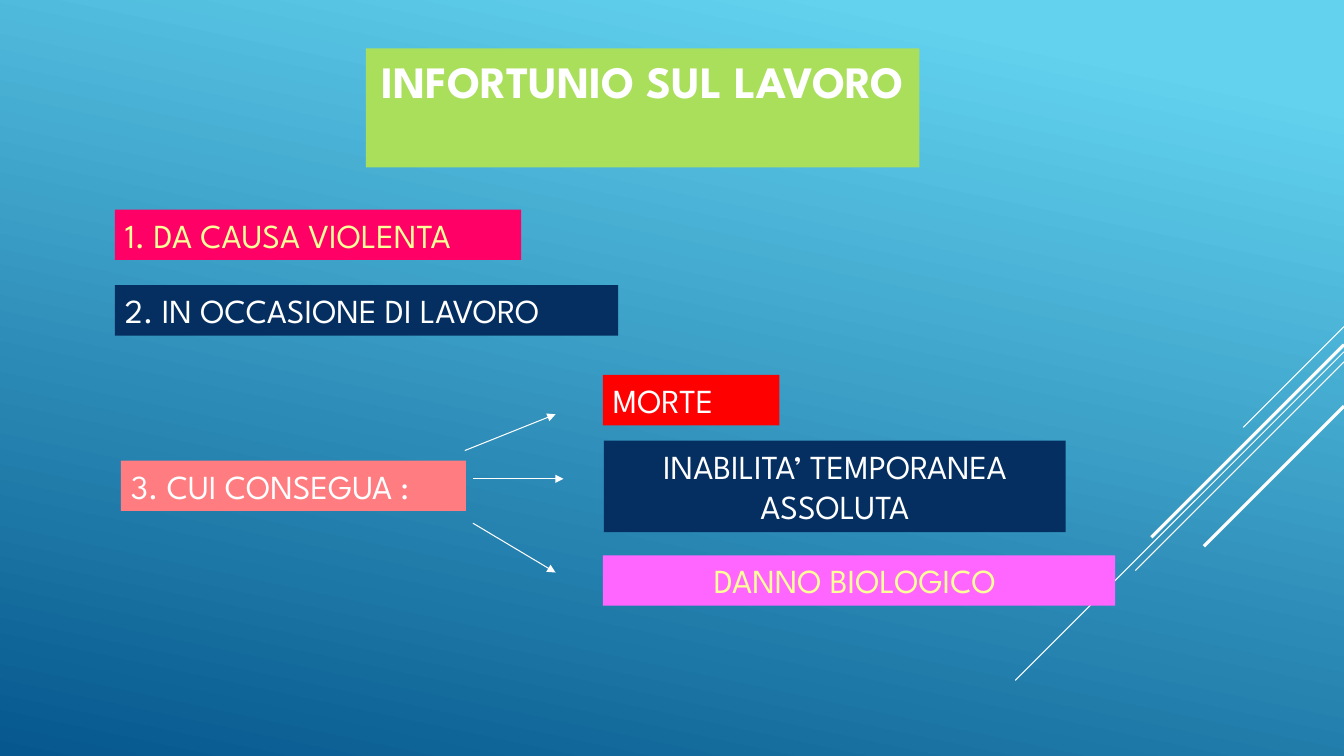
from copy import deepcopy
from dataclasses import dataclass

from pptx import Presentation
from pptx.dml.color import RGBColor
from pptx.enum.shapes import MSO_CONNECTOR, MSO_SHAPE
from pptx.enum.text import MSO_ANCHOR, MSO_AUTO_SIZE, PP_ALIGN
from pptx.oxml.ns import qn
from pptx.oxml.xmlchemy import OxmlElement
from pptx.util import Emu, Pt

RECTANGLE = MSO_SHAPE.RECTANGLE
STRAIGHT = MSO_CONNECTOR.STRAIGHT
TOP = MSO_ANCHOR.TOP
NO_AUTOFIT = MSO_AUTO_SIZE.NONE
LEFT, CENTER = PP_ALIGN.LEFT, PP_ALIGN.CENTER

EMU_PER_PX = 9144  # 100 px to the inch
FONT = "League Spartan"
WHITE, YELLOW, NAVY = "FFFFFF", "FFFF99", "052F61"
LINE_HEIGHT = 50


@dataclass
class Label:
    text: str
    left: int
    top: int
    width: int
    fill: str
    height: int = LINE_HEIGHT
    color: str = WHITE
    align: PP_ALIGN = LEFT


@dataclass
class Line:
    start: tuple[int, int]
    end: tuple[int, int]
    weight: float = 0.75
    arrow: bool = False


TITLE = Label("INFORTUNIO SUL LAVORO", 363, 48, 549, "AADF5C", 118, align=CENTER)

LABELS = [
    Label("1. DA CAUSA VIOLENTA", 114, 208, 403, "FF0066", color=YELLOW),
    Label("2. IN OCCASIONE DI LAVORO", 114, 283, 499, NAVY),
    Label("3. CUI CONSEGUA :", 120, 457, 342, "FF7C80"),
    Label("MORTE", 598, 372, 175, "FF0000"),
    Label("DANNO BIOLOGICO ", 598, 551, 508, "FF66FF", color=YELLOW, align=CENTER),
    Label("INABILITA’ TEMPORANEA ASSOLUTA", 599, 437, 458, NAVY, 91, align=CENTER),
]

ARROWS = [
    Line((461, 447), (551, 411), arrow=True),
    Line((469, 475), (559, 475), arrow=True),
    Line((469, 519), (551, 568), arrow=True),
]

# Diagonals run down from the right edge: start height, run, weight
EDGE = 1333
DIAGONALS = [
    Line((EDGE, y), (EDGE - run, y + run), weight)
    for y, run, weight in [
        (324, 100, 0.75), (349, 326, 0.75), (359, 207, 0.75),
        (342, 191, 2.25), (403, 139, 2.25),
    ]
]


def px(length: int) -> Emu:
    return Emu(length * EMU_PER_PX)


def rgb(color: str) -> RGBColor:
    return RGBColor.from_string(color)


def write(box, text: str, *, size: int, color: str, align: PP_ALIGN, bold: bool = False) -> None:
    frame = box.text_frame
    frame.word_wrap = True
    frame.auto_size = NO_AUTOFIT
    frame.vertical_anchor = TOP
    frame.margin_left = frame.margin_right = px(10)
    frame.margin_top = frame.margin_bottom = px(5)
    para = frame.paragraphs[0]
    para.alignment = align
    span = para.add_run()
    span.text = text
    span.font.name = FONT
    span.font.size = Pt(size)
    span.font.bold = bold
    span.font.color.rgb = rgb(color)


def paint_background(page) -> None:
    fill = page.background.fill
    fill.gradient()
    fill.gradient_angle = 360 - 102
    stop_list = page.background._cSld.find(".//" + qn("a:gsLst"))
    stop_list.append(deepcopy(stop_list[-1]))
    stops = [(0, "62D2EF"), (0.1, "62D2EF"), (1, "05578D")]
    for stop, (position, color) in zip(fill.gradient_stops, stops):
        stop.position = position
        stop.color.rgb = rgb(color)


def draw_title(page, label: Label) -> None:
    title = page.shapes.title
    title.left, title.top = px(label.left), px(label.top)
    title.width, title.height = px(label.width), px(label.height)
    title.fill.solid()
    title.fill.fore_color.rgb = rgb(label.fill)
    write(title, label.text, size=32, color=label.color, align=label.align, bold=True)


def draw_label(page, label: Label) -> None:
    box = page.shapes.add_shape(
        RECTANGLE, px(label.left), px(label.top), px(label.width), px(label.height)
    )
    box.shadow.inherit = False
    box.fill.solid()
    box.fill.fore_color.rgb = rgb(label.fill)
    box.line.fill.background()
    write(box, label.text, size=24, color=label.color, align=label.align)


def draw_line(page, line: Line) -> None:
    connector = page.shapes.add_connector(
        STRAIGHT, *(px(value) for value in line.start + line.end)
    )
    connector.line.color.rgb = rgb(WHITE)
    connector.line.width = Pt(line.weight)
    if line.arrow:
        head = OxmlElement("a:tailEnd")
        head.set("type", "triangle")
        connector.line._get_or_add_ln().append(head)
    connector._element.spPr.append(OxmlElement("a:effectLst"))


def main() -> None:
    deck = Presentation()
    deck.slide_width, deck.slide_height = px(EDGE), px(750)
    page = deck.slides.add_slide(deck.slide_layouts[5])

    # Backdrop and title
    paint_background(page)
    for diagonal in DIAGONALS:
        draw_line(page, diagonal)
    draw_title(page, TITLE)

    # Conditions and their consequences
    for label in LABELS:
        draw_label(page, label)
    for arrow in ARROWS:
        draw_line(page, arrow)

    deck.save("out.pptx")


if __name__ == "__main__":
    main()
